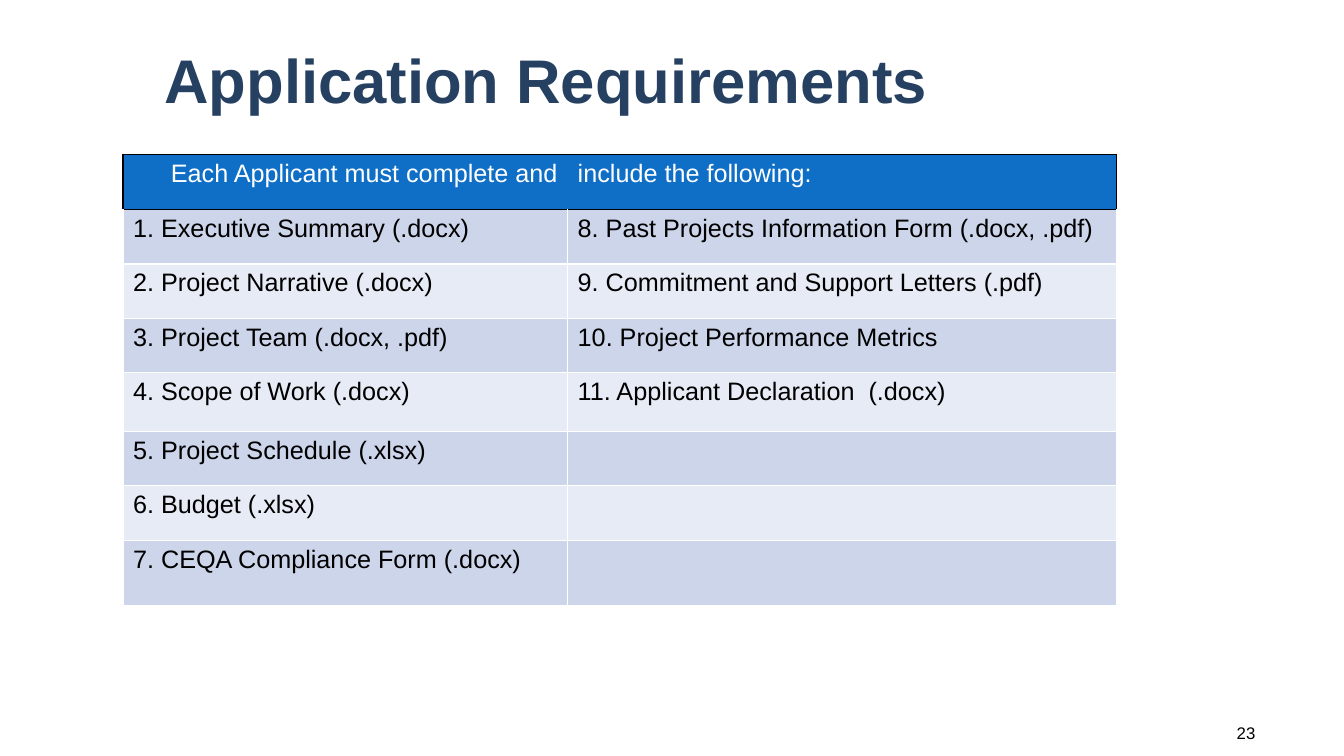
from itertools import zip_longest

from lxml.etree import SubElement
from pptx import Presentation
from pptx.dml.color import RGBColor
from pptx.enum.text import MSO_ANCHOR as Anchor, MSO_AUTO_SIZE as AutoSize, PP_ALIGN as Align
from pptx.oxml.ns import qn
from pptx.util import Inches, Pt

COLORS = {
    "title": "254061",
    "header": "0F6FC6",
    "odd": "CCD5EA",
    "even": "E7EBF5",
    "white": "FFFFFF",
    "black": "000000",
}
HEADINGS = ["Each Applicant must complete and", "include the following:"]
LEFT_ITEMS = [
    "1. Executive Summary (.docx)",
    "2. Project Narrative (.docx)",
    "3. Project Team (.docx, .pdf)",
    "4. Scope of Work (.docx)",
    "5. Project Schedule (.xlsx)",
    "6. Budget (.xlsx)",
    "7. CEQA Compliance Form (.docx)",
]
RIGHT_ITEMS = [
    "8. Past Projects Information Form (.docx, .pdf)",
    "9. Commitment and Support Letters (.pdf)",
    "10. Project Performance Metrics",
    "11. Applicant Declaration  (.docx)",
]
COLUMN_WIDTHS = [4.41, 5.44]
ROW_HEIGHTS = [0.55, 0.54, 0.54, 0.54, 0.58, 0.54, 0.54, 0.65]


def color(name):
    return RGBColor.from_string(COLORS[name])


def write(frame, text, size, color_name, align=Align.LEFT, bold=False):
    paragraph = frame.paragraphs[0]
    paragraph.text = text
    paragraph.alignment = align
    font = paragraph.font
    font.name, font.size, font.bold = "Arial", Pt(size), bold
    font.color.rgb = color(color_name)
    return paragraph


def set_borders(cell, **sides):
    properties = cell._tc.get_or_add_tcPr()
    for side in "LRTB":
        line = SubElement(properties, qn(f"a:ln{side}"), w=str(Pt(1)))
        if sides[side]:
            fill = SubElement(line, qn("a:solidFill"))
            SubElement(fill, qn("a:srgbClr"), val=COLORS[sides[side]])
        else:
            SubElement(line, qn("a:noFill"))


def fill_cell(cell, text, fill_name, text_color, align=Align.LEFT):
    cell.fill.solid()
    cell.fill.fore_color.rgb = color(fill_name)
    write(cell.text_frame, text, 18, text_color, align)


def add_title(slide, text):
    title = slide.shapes.title
    title.left, title.top = Inches(1.53), Inches(0.26)
    title.width, title.height = Inches(10.89), Inches(1.14)
    frame = title.text_frame
    frame.auto_size = AutoSize.NONE
    frame.vertical_anchor = Anchor.MIDDLE
    write(frame, text, 44, "title", bold=True).line_spacing = 0.9


def add_requirements_table(slide):
    rows = list(zip_longest(LEFT_ITEMS, RIGHT_ITEMS, fillvalue=""))
    table = slide.shapes.add_table(
        len(rows) + 1, 2, Inches(1.22), Inches(1.53),
        Inches(sum(COLUMN_WIDTHS)), Inches(sum(ROW_HEIGHTS)),
    ).table
    for column, width in zip(table.columns, COLUMN_WIDTHS):
        column.width = Inches(width)
    for row, height in zip(table.rows, ROW_HEIGHTS):
        row.height = Inches(height)

    left, right = table.cell(0, 0), table.cell(0, 1)
    set_borders(left, L="black", R=None, T="black", B="black")
    set_borders(right, L=None, R="black", T="black", B="black")
    fill_cell(left, HEADINGS[0], "header", "white", Align.RIGHT)
    fill_cell(right, HEADINGS[1], "header", "white")

    for number, texts in enumerate(rows, start=1):
        top = "black" if number == 1 else "white"
        band = "odd" if number % 2 else "even"
        for column, text in enumerate(texts):
            cell = table.cell(number, column)
            set_borders(cell, L="white", R="white", T=top, B="white")
            fill_cell(cell, text, band, "black")


def add_page_number(slide, text):
    box = slide.shapes.add_textbox(Inches(10.58), Inches(7.07), Inches(1.97), Inches(0.4))
    frame = box.text_frame
    frame.word_wrap = True
    frame.vertical_anchor = Anchor.MIDDLE
    write(frame, text, 12, "black", Align.RIGHT)


def main():
    """Build the application requirements slide."""
    presentation = Presentation()
    presentation.slide_width, presentation.slide_height = Inches(13.33), Inches(7.5)
    slide = presentation.slides.add_slide(presentation.slide_layouts.get_by_name("Title Only"))
    add_title(slide, "Application Requirements")
    add_requirements_table(slide)
    add_page_number(slide, "23")
    presentation.save("out.pptx")


if __name__ == "__main__":
    main()
